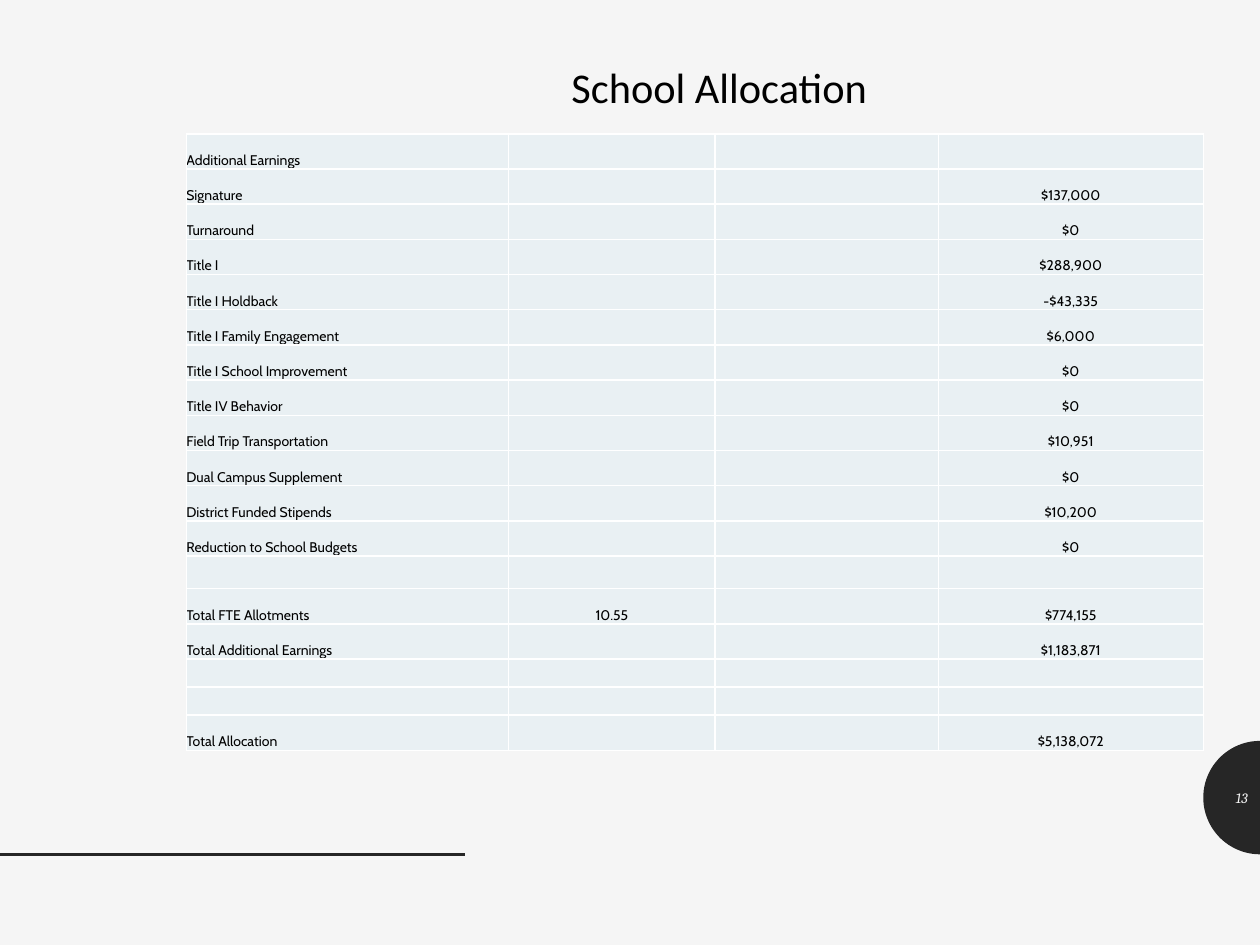
import math

from lxml import etree
from pptx import Presentation
from pptx.dml.color import RGBColor
from pptx.enum.shapes import MSO_CONNECTOR
from pptx.enum.text import MSO_ANCHOR, PP_ALIGN
from pptx.oxml.ns import qn
from pptx.util import Pt

LEFT, CENTER, RIGHT = PP_ALIGN.LEFT, PP_ALIGN.CENTER, PP_ALIGN.RIGHT
MIDDLE, BOTTOM = MSO_ANCHOR.MIDDLE, MSO_ANCHOR.BOTTOM
STRAIGHT = MSO_CONNECTOR.STRAIGHT

BACKGROUND = RGBColor(0xF5, 0xF5, 0xF5)
DARK = RGBColor(0x26, 0x26, 0x26)
BLACK = RGBColor(0x00, 0x00, 0x00)
WHITE = RGBColor(0xFF, 0xFF, 0xFF)
CELL_FILL = RGBColor(0xE9, 0xF0, 0xF3)

SLIDE_WIDTH, SLIDE_HEIGHT = 720, 540
COLUMN_WIDTHS = [184.2, 118, 127.5, 151.5]
ROW_HEIGHT = 20.12
SPACER_HEIGHTS = {12: 18.7, 15: 16.1, 16: 16.1}
CELL_SIZE = 8

ROWS = [
    ("Additional Earnings", "", "", ""),
    ("Signature", "", "", "$137,000"),
    ("Turnaround", "", "", "$0"),
    ("Title I", "", "", "$288,900"),
    ("Title I Holdback", "", "", "-$43,335"),
    ("Title I Family Engagement", "", "", "$6,000"),
    ("Title I School Improvement", "", "", "$0"),
    ("Title IV Behavior", "", "", "$0"),
    ("Field Trip Transportation", "", "", "$10,951"),
    ("Dual Campus Supplement", "", "", "$0"),
    ("District Funded Stipends", "", "", "$10,200"),
    ("Reduction to School Budgets", "", "", "$0"),
    ("", "", "", ""),
    ("Total FTE Allotments", "10.55", "", "$774,155"),
    ("Total Additional Earnings", "", "", "$1,183,871"),
    ("", "", "", ""),
    ("", "", "", ""),
    ("Total Allocation", "", "", "$5,138,072"),
]


def write_text(frame, text, *, font, size, color, align=LEFT, italic=False, line_spacing=None):
    paragraph = frame.paragraphs[0]
    paragraph.alignment = align
    paragraph.line_spacing = line_spacing
    run = paragraph.add_run()
    run.text = text
    run.font.name = font
    run.font.size = Pt(size)
    run.font.italic = italic
    run.font.color.rgb = color


def add_text_box(slide, text, left, top, width, height, **text_format):
    frame = slide.shapes.add_textbox(Pt(left), Pt(top), Pt(width), Pt(height)).text_frame
    frame.word_wrap = True
    frame.vertical_anchor = MIDDLE
    write_text(frame, text, **text_format)


def add_half_disc(slide, center_x, center_y, radius, steps=48):
    angles = [math.pi * (0.5 + step / steps) for step in range(steps + 1)]
    points = [
        (Pt(center_x + radius * math.cos(angle)), Pt(center_y + radius * math.sin(angle)))
        for angle in angles
    ]
    builder = slide.shapes.build_freeform(*points[0])
    builder.add_line_segments(points[1:], close=True)
    shape = builder.convert_to_shape()
    shape.shadow.inherit = False
    shape.fill.solid()
    shape.fill.fore_color.rgb = DARK
    shape.line.fill.background()


def add_rule(slide, start_x, end_x, y, width):
    connector = slide.shapes.add_connector(STRAIGHT, Pt(start_x), Pt(y), Pt(end_x), Pt(y))
    connector.line.color.rgb = DARK
    connector.line.width = Pt(width)
    etree.SubElement(connector._element.spPr, qn("a:effectLst"))


def set_borders(cell, color, width):
    properties = cell._tc.get_or_add_tcPr()
    for side in ("lnL", "lnR", "lnT", "lnB"):
        line = etree.SubElement(properties, qn(f"a:{side}"), w=str(Pt(width)))
        fill = etree.SubElement(line, qn("a:solidFill"))
        etree.SubElement(fill, qn("a:srgbClr"), val=str(color))


def fill_cell(cell, text, align):
    cell.margin_left = cell.margin_right = cell.margin_top = cell.margin_bottom = 0
    cell.vertical_anchor = BOTTOM
    set_borders(cell, WHITE, 1)
    cell.fill.solid()
    cell.fill.fore_color.rgb = CELL_FILL
    if text:
        write_text(cell.text_frame, text, font="Cabin", size=CELL_SIZE, color=BLACK, align=align)
    else:
        paragraph = cell.text_frame.paragraphs[0]
        etree.SubElement(paragraph._p, qn("a:endParaRPr"), sz=str(CELL_SIZE * 100))


def add_allocation_table(slide, left, top):
    heights = [SPACER_HEIGHTS.get(index, ROW_HEIGHT) for index in range(len(ROWS))]
    table = slide.shapes.add_table(
        len(ROWS), len(COLUMN_WIDTHS), Pt(left), Pt(top),
        Pt(sum(COLUMN_WIDTHS)), Pt(sum(heights)),
    ).table
    table.first_row = table.horz_banding = False
    for column, width in zip(table.columns, COLUMN_WIDTHS):
        column.width = Pt(width)
    for row, height, texts in zip(table.rows, heights, ROWS):
        row.height = Pt(height)
        for index, (cell, text) in enumerate(zip(row.cells, texts)):
            fill_cell(cell, text, CENTER if index else LEFT)


def main():
    presentation = Presentation()
    presentation.slide_width = Pt(SLIDE_WIDTH)
    presentation.slide_height = Pt(SLIDE_HEIGHT)
    slide = presentation.slides.add_slide(presentation.slide_layouts[6])
    slide.background.fill.solid()
    slide.background.fill.fore_color.rgb = BACKGROUND

    add_half_disc(slide, SLIDE_WIDTH, 455.8, 32.4)
    add_rule(slide, 0, 265.7, 488.2, 2)
    add_text_box(slide, "School Allocation", 87.1, 36.7, 648, 31,
                 font="Calibri", size=24.2, color=BLACK, align=CENTER, line_spacing=0.8)
    add_text_box(slide, "13", 687.6, 441.4, 32.4, 28.8,
                 font="Cambria", size=8.2, color=BACKGROUND, align=RIGHT, italic=True)
    add_allocation_table(slide, 106.5, 76.5)
    presentation.save("out.pptx")


if __name__ == "__main__":
    main()
